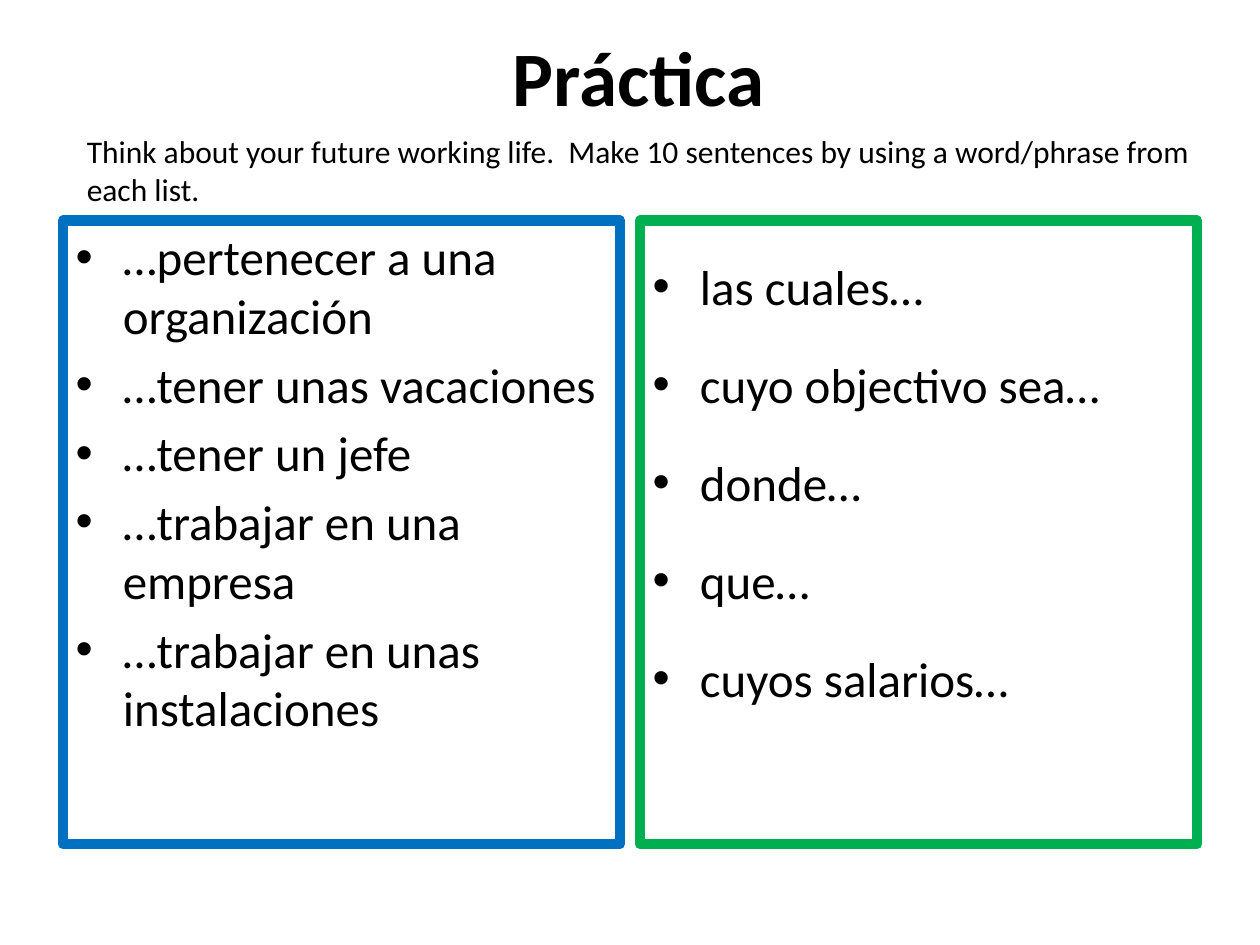
import pptx
import pptx.dml.color
import pptx.enum.text
import pptx.util

BLACK = pptx.dml.color.RGBColor(0x00, 0x00, 0x00)
BLUE = pptx.dml.color.RGBColor(0x00, 0x70, 0xC0)
GREEN = pptx.dml.color.RGBColor(0x00, 0xB0, 0x50)

MARGIN = 0.05
GAP = 0.016
LIST_WIDTH = (1 - 2 * MARGIN - GAP) / 2
LIST_TOP = 1.75 / 7.5
LIST_HEIGHT = 0.66

PHRASES = [
    "…pertenecer a una organización",
    "…tener unas vacaciones",
    "…tener un jefe",
    "…trabajar en una empresa",
    "…trabajar en unas instalaciones",
]
LINKERS = ["las cuales…", "cuyo objectivo sea…", "donde…", "que…", "cuyos salarios…"]


def write(p, text, size=18, bold=False, align=None, spacing=None, color=BLACK, font="Calibri"):
    r = p.add_run()
    r.text = text
    r.font.name = font
    r.font.size = pptx.util.Pt(size)
    r.font.bold = bold
    r.font.color.rgb = color
    p.alignment = align
    if spacing:
        p.line_spacing = spacing


class Deck:
    title_size = 44
    list_size = 28
    note_size = 18
    border = 6

    def __init__(self, width, height):
        self.prs = pptx.Presentation()
        self.prs.slide_width = pptx.util.Inches(width)
        self.prs.slide_height = pptx.util.Inches(height)
        self.s = self.prs.slides.add_slide(self.prs.slide_layouts[3])

    def box(self, x, y, w, h):
        sw, sh = self.prs.slide_width, self.prs.slide_height
        return round(x * sw), round(y * sh), round(w * sw), round(h * sh)

    def place(self, index, *share):
        sp = self.s.placeholders[index]
        sp.left, sp.top, sp.width, sp.height = self.box(*share)
        sp.text_frame.auto_size = pptx.enum.text.MSO_AUTO_SIZE.NONE
        return sp

    def title(self, text, *share):
        tf = self.place(0, *share).text_frame
        tf.vertical_anchor = pptx.enum.text.MSO_ANCHOR.MIDDLE
        write(tf.paragraphs[0], text, size=self.title_size, bold=True,
              align=pptx.enum.text.PP_ALIGN.CENTER)

    def framed_list(self, index, items, color, *share, spacing=None):
        sp = self.place(index, *share)
        sp.line.color.rgb = color
        sp.line.width = pptx.util.Pt(self.border)
        tf = sp.text_frame
        for i, item in enumerate(items):
            p = tf.add_paragraph() if i else tf.paragraphs[0]
            write(p, item, size=self.list_size, spacing=spacing)

    def note(self, text, *share):
        tf = self.s.shapes.add_textbox(*self.box(*share)).text_frame
        tf.word_wrap = True
        tf.auto_size = pptx.enum.text.MSO_AUTO_SIZE.SHAPE_TO_FIT_TEXT
        write(tf.paragraphs[0], text, size=self.note_size)


def main():
    deck = Deck(10, 7.5)
    deck.title("Práctica", 0.057, 0, 0.9, 0.16)
    deck.framed_list(1, PHRASES, BLUE, MARGIN, LIST_TOP, LIST_WIDTH, LIST_HEIGHT)
    deck.framed_list(2, LINKERS, GREEN, MARGIN + LIST_WIDTH + GAP, LIST_TOP,
                     LIST_WIDTH, LIST_HEIGHT, spacing=1.5)
    deck.note("Think about your future working life.  Make 10 sentences by using "
              "a word/phrase from each list.", 0.059, 1 / 7.5, 0.921, 0.71 / 7.5)
    deck.prs.save("out.pptx")


if __name__ == "__main__":
    main()
